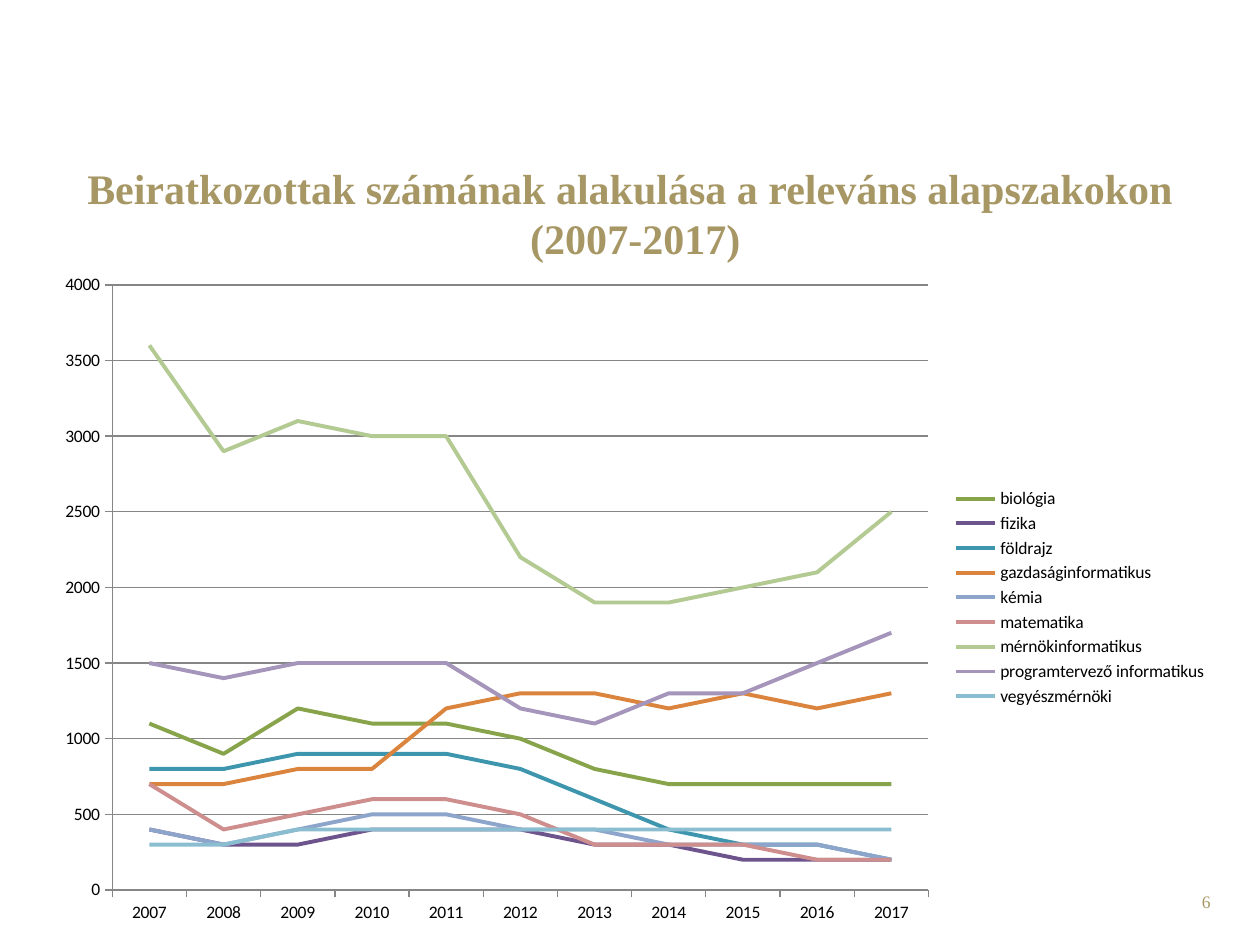
"""Builds the slide on enrolment numbers in the relevant bachelor programmes."""
from dataclasses import dataclass

from lxml.etree import SubElement
from pptx import Presentation
from pptx.chart.data import CategoryChartData
from pptx.dml.color import RGBColor
from pptx.enum.chart import XL_CHART_TYPE, XL_LEGEND_POSITION, XL_TICK_MARK
from pptx.enum.text import MSO_ANCHOR, PP_ALIGN
from pptx.oxml.ns import qn
from pptx.util import Emu, Pt

WIDTH, HEIGHT = 1260, 945
YEARS = [str(year) for year in range(2007, 2018)]
PLOT_AREA = {"x": 0.05, "y": 0.03, "w": 0.7, "h": 0.91}
PROGRAMMES = [
    ("biológia", "87A44B", [1100, 900, 1200, 1100, 1100, 1000, 800, 700, 700, 700, 700]),
    ("fizika", "6E548D", [400, 300, 300, 400, 400, 400, 300, 300, 200, 200, 200]),
    ("földrajz", "3D96AE", [800, 800, 900, 900, 900, 800, 600, 400, 300, 300, 200]),
    ("gazdaságinformatikus", "DB843D",
     [700, 700, 800, 800, 1200, 1300, 1300, 1200, 1300, 1200, 1300]),
    ("kémia", "8EA5CB", [400, 300, 400, 500, 500, 400, 400, 300, 300, 300, 200]),
    ("matematika", "CE8E8D", [700, 400, 500, 600, 600, 500, 300, 300, 300, 200, 200]),
    ("mérnökinformatikus", "B3CA92",
     [3600, 2900, 3100, 3000, 3000, 2200, 1900, 1900, 2000, 2100, 2500]),
    ("programtervező informatikus", "A595BB",
     [1500, 1400, 1500, 1500, 1500, 1200, 1100, 1300, 1300, 1500, 1700]),
    ("vegyészmérnöki", "8BBDD1", [300, 300, 400, 400, 400, 400, 400, 400, 400, 400, 400]),
]


@dataclass(frozen=True)
class Theme:
    """Colours, fonts and sizes of the slide."""
    gold: str = "A69765"
    ink: str = "000000"
    grid: str = "868686"
    serif: str = "Times New Roman"
    sans: str = "Calibri"
    title: int = 24
    small: int = 10
    hairline: float = 0.75
    series_line: float = 2.25


def px(n):
    """Turn pixels into EMU."""
    return Emu(round(n * 914400 / 126))


class Builder:
    """Holds the theme and the current slide."""

    def __init__(self, s, theme):
        """Keep the slide and its theme."""
        self.s, self.theme = s, theme

    def place(self, sp, box):
        """Move a shape to a pixel box."""
        sp.left, sp.top, sp.width, sp.height = map(px, box)

    def font(self, font, name, size, color, bold=False):
        """Format one font."""
        font.name, font.size, font.bold = name, Pt(size), bold
        font.color.rgb = RGBColor.from_string(color)

    def run(self, p, text, size, bold=False):
        """Add one gold run to a paragraph."""
        r = p.add_run()
        r.text = text
        self.font(r.font, self.theme.serif, size, self.theme.gold, bold)

    def title(self, box, lines):
        """Fill the title placeholder, one line break between lines."""
        sp = self.s.shapes.title
        self.place(sp, box)
        tf = sp.text_frame
        tf.word_wrap, tf.vertical_anchor = True, MSO_ANCHOR.MIDDLE
        p = tf.paragraphs[0]
        p.alignment = PP_ALIGN.CENTER
        for i, line in enumerate(lines):
            if i:
                p.add_line_break()
            self.run(p, line, self.theme.title, True)

    def text(self, box, text, align):
        """Add a small text box."""
        tf = self.s.shapes.add_textbox(*map(px, box)).text_frame
        tf.word_wrap = True
        p = tf.paragraphs[0]
        p.alignment = align
        self.run(p, text, self.theme.small)

    def line(self, line, color, width):
        """Format one chart line."""
        line.color.rgb = RGBColor.from_string(color)
        line.width = Pt(width)

    def plot_area(self, chart, layout):
        """Fix the inner plot area as fractions of the chart."""
        area = chart.plots[0]._element.getparent()
        node = area.find(qn("c:layout"))
        if node is None:
            node = area.makeelement(qn("c:layout"))
            area.insert(0, node)
        manual = SubElement(node, qn("c:manualLayout"))
        settings = {"layoutTarget": "inner", "xMode": "edge", "yMode": "edge", **layout}
        for tag, value in settings.items():
            SubElement(manual, qn(f"c:{tag}")).set("val", str(value))

    def line_chart(self, box, categories, rows, layout):
        """Add a line chart with a legend on the right."""
        t = self.theme
        data = CategoryChartData()
        data.categories = categories
        for name, _, values in rows:
            data.add_series(name, values)
        chart = self.s.shapes.add_chart(XL_CHART_TYPE.LINE, *map(px, box), data).chart
        chart.has_title = False
        self.font(chart.font, t.sans, t.small, t.ink)
        chart.has_legend = True
        chart.legend.position = XL_LEGEND_POSITION.RIGHT
        chart.legend.include_in_layout = False
        chart.plots[0].vary_by_categories = False
        for series, (_, color, _) in zip(chart.plots[0].series, rows):
            series.smooth = False
            self.line(series.format.line, color, t.series_line)
        for axis in (chart.category_axis, chart.value_axis):
            axis.major_tick_mark = XL_TICK_MARK.OUTSIDE
            axis.minor_tick_mark = XL_TICK_MARK.NONE
            self.line(axis.format.line, t.grid, t.hairline)
        axis = chart.value_axis
        axis.minimum_scale, axis.maximum_scale, axis.major_unit = 0, 4000, 500
        axis.has_major_gridlines = True
        self.line(axis.major_gridlines.format.line, t.grid, t.hairline)
        self.plot_area(chart, layout)


def main():
    """Build and save the slide."""
    prs = Presentation()
    prs.slide_width, prs.slide_height = px(WIDTH), px(HEIGHT)
    b = Builder(prs.slides.add_slide(prs.slide_layouts[5]), Theme())
    b.text((929, 885, 294, 50), "6", PP_ALIGN.RIGHT)
    b.title((0, 155, WIDTH, 115),
            ["Beiratkozottak számának alakulása a releváns alapszakokon", " (2007-2017)"])
    b.line_chart((54, 265, 1166, 665), YEARS, PROGRAMMES, PLOT_AREA)
    prs.save("out.pptx")


if __name__ == "__main__":
    main()
